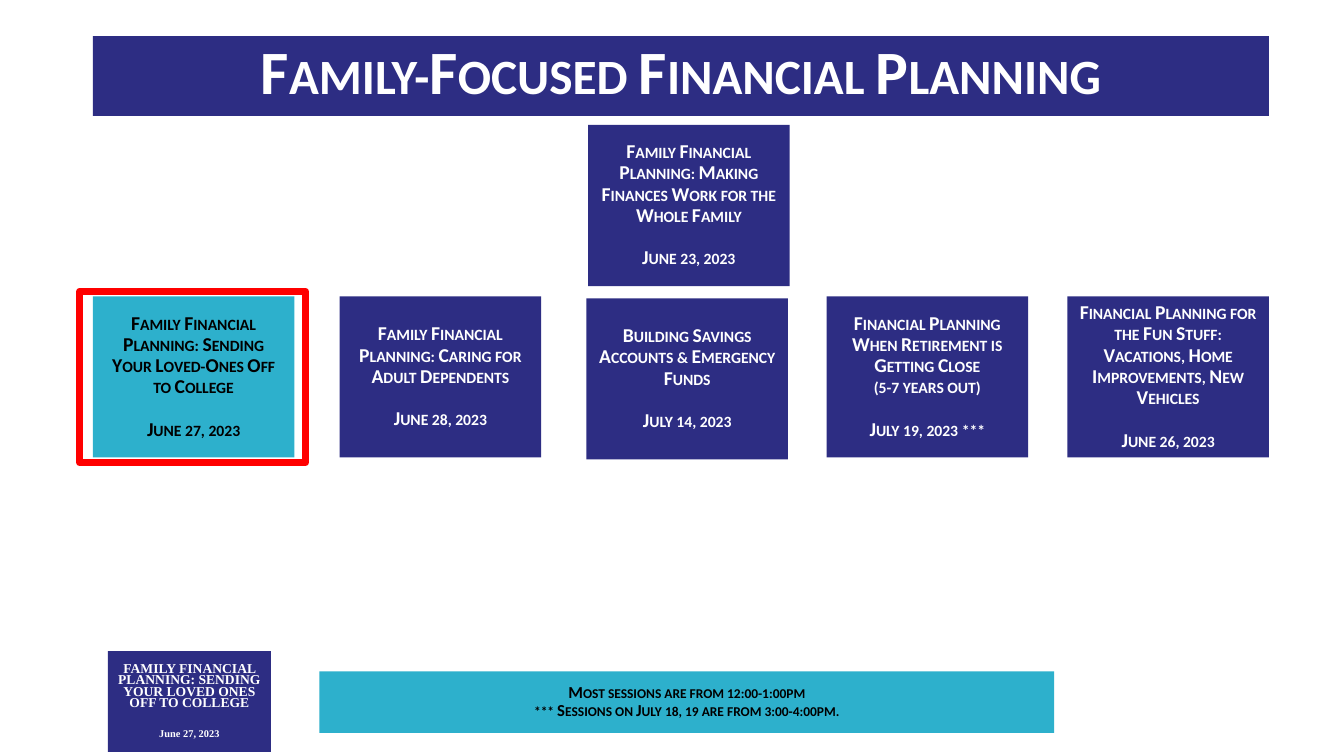
from copy import deepcopy
from dataclasses import dataclass

from pptx import Presentation
from pptx.dml.color import RGBColor as Rgb
from pptx.enum.shapes import MSO_SHAPE as Shape
from pptx.enum.text import MSO_ANCHOR as Anchor, PP_ALIGN as Align
from pptx.oxml.ns import qn
from pptx.util import Cm, Pt


@dataclass(frozen=True)
class Theme:
    """Colours, fonts and type sizes of the slide."""
    navy: Rgb = Rgb(0x2D, 0x2D, 0x83)
    teal: Rgb = Rgb(0x2D, 0xB0, 0xCC)
    red: Rgb = Rgb(0xFF, 0x00, 0x00)
    white: Rgb = Rgb(0xFF, 0xFF, 0xFF)
    black: Rgb = Rgb(0x00, 0x00, 0x00)
    sans: str = "Calibri"
    serif: str = "Times New Roman"
    title: float = 44
    session: float = 14
    note: float = 12
    badge: float = 9.7
    badge_date: float = 7.4


THEME = Theme()
TILE_WIDTH, TILE_HEIGHT, ROW_TOP = 5.08, 4.06, 7.47

OVERVIEW = ("Family Financial Planning: Making Finances Work for the Whole Family",
            "June 23, 2023")
SESSIONS = [
    (2.34, 0, "Family Financial Planning: Sending Your Loved-Ones Off to College",
     "June 27, 2023"),
    (8.56, 0, "Family Financial Planning: Caring for Adult Dependents",
     "June 28, 2023"),
    (14.78, 0.05, "Building Savings Accounts & Emergency Funds", "July 14, 2023"),
    (20.83, 0,
     "Financial Planning When Retirement is Getting Close\v(5-7 years out)",
     "July 19, 2023 ***"),
    (26.9, 0,
     "Financial Planning for the Fun Stuff: Vacations, Home Improvements, New Vehicles",
     "June 26, 2023"),
]


def write(paragraph, text, *, size, color, font=THEME.sans, small_caps=True,
          spacing=0.9, before=0):
    """Fill a paragraph with centred bold text in the given format."""
    paragraph.text = text
    paragraph.alignment = Align.CENTER
    paragraph.line_spacing = spacing
    if before:
        paragraph.space_before = Pt(before)
    for run in paragraph.runs:
        run.font.size, run.font.name, run.font.bold = Pt(size), font, True
        run.font.color.rgb = color
        if small_caps:
            run.font._element.set("cap", "small")
    for line_break in paragraph._p.findall(qn("a:br")):
        line_break.insert(0, deepcopy(paragraph.runs[0].font._element))


class PlanningSlide:
    """Holds the theme and the current slide."""

    def __init__(self, slide, theme):
        """Keep the slide to draw on and its theme."""
        self.slide, self.theme = slide, theme

    def panel(self, left, top, width, height, fill, anchor=Anchor.MIDDLE):
        """Add a filled rectangle and return its text frame."""
        panel = self.slide.shapes.add_shape(
            Shape.RECTANGLE, Cm(left), Cm(top), Cm(width), Cm(height))
        panel.shadow.inherit = False
        panel.fill.solid()
        panel.fill.fore_color.rgb = fill
        panel.line.fill.background()
        panel.text_frame.word_wrap = True
        panel.text_frame.vertical_anchor = anchor
        return panel.text_frame

    def banner(self, text):
        """Add the title banner."""
        frame = self.panel(2.34, 0.91, 29.64, 2.01, self.theme.navy, Anchor.TOP)
        write(frame.paragraphs[0], text, size=self.theme.title,
              color=self.theme.white)

    def session(self, left, top, topic, date, current=False):
        """Add a session tile with its topic and date."""
        theme = self.theme
        fill, color = ((theme.teal, theme.black) if current
                       else (theme.navy, theme.white))
        frame = self.panel(left, top, TILE_WIDTH, TILE_HEIGHT, fill)
        write(frame.paragraphs[0], topic, size=theme.session, color=color)
        write(frame.add_paragraph(), date, size=theme.session, color=color,
              before=15.3)

    def badge(self, topic, date):
        """Add the small badge that names the current session."""
        theme = self.theme
        frame = self.panel(2.72, 16.41, 4.11, 2.54, theme.navy)
        look = dict(color=theme.white, font=theme.serif, small_caps=False,
                    spacing=0.7)
        write(frame.paragraphs[0], topic, size=theme.badge, **look)
        write(frame.add_paragraph(), date, size=theme.badge_date, before=14.5,
              **look)

    def note(self, text):
        """Add the strip with session times."""
        frame = self.panel(8.05, 16.92, 18.52, 1.55, self.theme.teal)
        write(frame.paragraphs[0], text, size=self.theme.note,
              color=self.theme.black)

    def highlight(self, left, top, width, height):
        """Add an unfilled red frame."""
        outline = self.slide.shapes.add_shape(
            Shape.RECTANGLE, Cm(left), Cm(top), Cm(width), Cm(height))
        outline.shadow.inherit = False
        outline.fill.background()
        outline.line.color.rgb = self.theme.red
        outline.line.width = Pt(5)


def main():
    """Build the slide and save it."""
    deck = Presentation()
    deck.slide_width, deck.slide_height = Cm(33.87), Cm(19.05)
    page = PlanningSlide(deck.slides.add_slide(deck.slide_layouts[6]), THEME)
    page.badge("FAMILY FINANCIAL PLANNING: SENDING YOUR LOVED ONES OFF TO COLLEGE",
               "June 27, 2023")
    page.banner("Family-Focused Financial Planning")
    page.session(14.82, 3.15, *OVERVIEW)
    for index, (left, drop, topic, date) in enumerate(SESSIONS):
        page.session(left, ROW_TOP + drop, topic, date, current=index == 0)
    page.note("Most sessions are from 12:00-1:00pm\v"
              "*** Sessions on July 18, 19 are from 3:00-4:00pm.")
    page.highlight(2.01, 7.34, 5.69, 4.32)
    deck.save("out.pptx")


if __name__ == "__main__":
    main()
